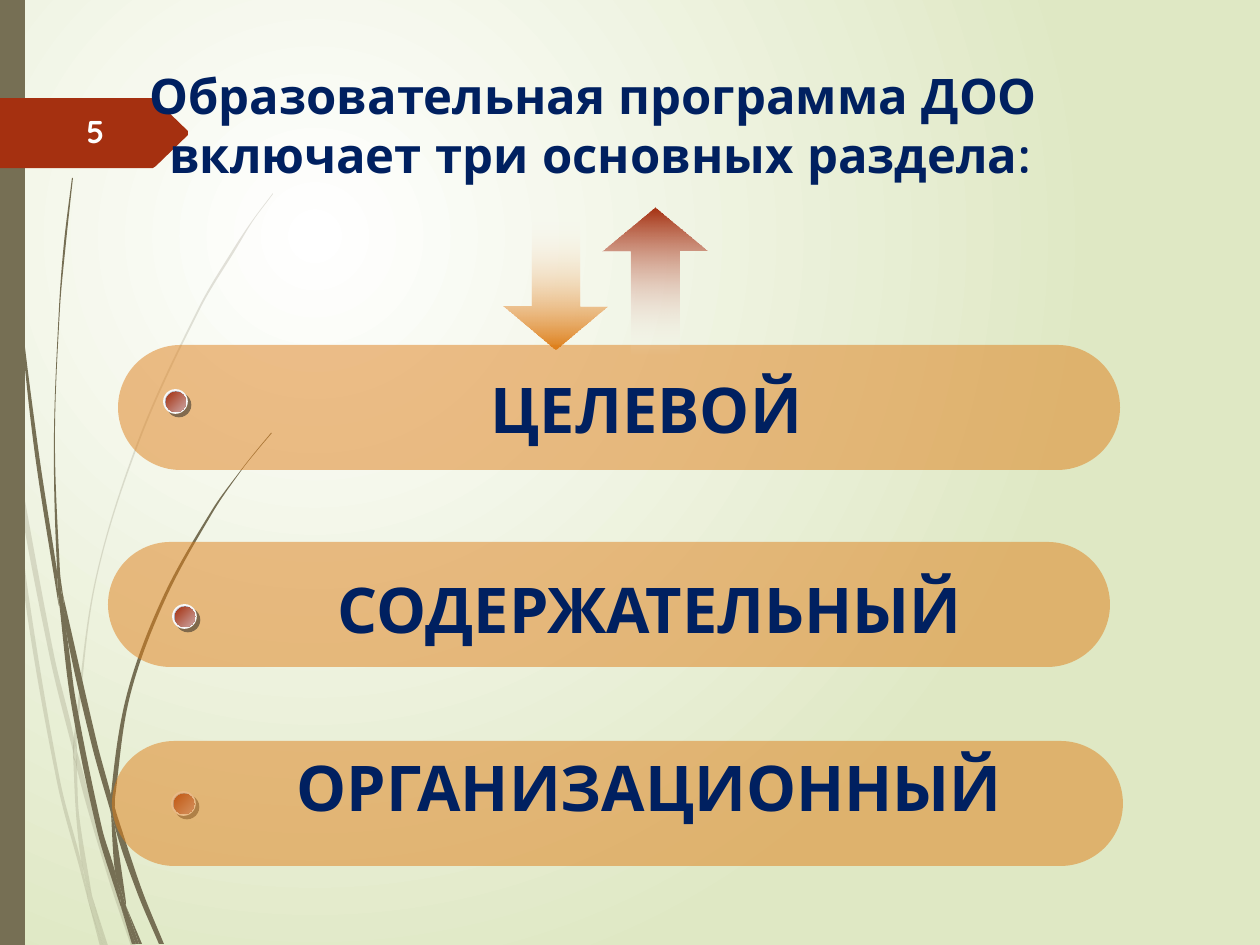
"""Build a slide that names the three sections of a preschool programme."""
from math import dist
from lxml.etree import SubElement as Sub
from pptx import Presentation
from pptx.dml.color import RGBColor as Rgb
from pptx.enum.shapes import MSO_SHAPE as Kind
from pptx.enum.text import MSO_ANCHOR as Anchor, PP_ALIGN as Align
from pptx.oxml.ns import qn
from pptx.util import Pt

UNIT = 914400 / 126
HUE = {
    "olive": "766F54", "rust": "A53010", "navy": "002060", "white": "FFFFFF",
    "amber": "DE7E18", "leaf": "DFE8C4", "rose": "CCA7A5", "mist": "DDDDE1",
    "ink": "223864", "rim": "F8F8F8", "shade": "1C1C1C",
}
PALE = [
    [(10, 441), (8, 406), (0, 355), (0, 377), (9, 433)],
    [(50, 658), (74, 755), (74, 738), (54, 655), (13, 435), (15, 474)],
    [(81, 765), (77, 751), (77, 769), (107, 874), (131, 946), (136, 946),
     (111, 872)],
    [(105, 946), (108, 946), (92, 896)],
    [(81, 861), (60, 780), (28, 591), (15, 474), (10, 441), (24, 592),
     (57, 782), (81, 873), (88, 900), (87, 891)],
    [(73, 755), (76, 814), (81, 861), (84, 872), (92, 896), (91, 890),
     (79, 814), (77, 769), (77, 766)],
    [(77, 736), (96, 582), (140, 440), (200, 309), (236, 249), (253, 221),
     (273, 194), (273, 193), (252, 221), (234, 248), (199, 307), (139, 438),
     (95, 581), (74, 736), (74, 738), (77, 751)],
    [(88, 900), (100, 946), (103, 946)],
    [(77, 766), (77, 769), (77, 751), (74, 738), (73, 755)],
    [(84, 872), (82, 861), (87, 891), (88, 900), (103, 946), (105, 946),
     (92, 896)],
]
DARK = [
    [(6, 139), (18, 294), (34, 447), (58, 601), (59, 606), (57, 576),
     (57, 571), (38, 447), (19, 292), (8, 137), (5, 60), (4, 0), (3, 0),
     (4, 60)],
    [(92, 746), (111, 813), (111, 798), (111, 795), (97, 743), (63, 595),
     (67, 636)],
    [(118, 818), (115, 808), (115, 827), (137, 892), (159, 944), (164, 944),
     (142, 890)],
    [(115, 871), (102, 828), (76, 701), (67, 636), (59, 601), (71, 702),
     (97, 830), (116, 892), (122, 910), (121, 903)],
    [(63, 595), (60, 571), (55, 440), (60, 309), (66, 243), (73, 178),
     (72, 178), (64, 243), (59, 309), (54, 440), (57, 566), (62, 595)],
    [(139, 944), (142, 944), (126, 906)],
    [(59, 601), (67, 636), (63, 595), (62, 595), (57, 566), (57, 571)],
    [(115, 798), (130, 696), (165, 600), (213, 512), (241, 471), (256, 452),
     (272, 433), (271, 433), (256, 451), (241, 470), (212, 510), (163, 597),
     (127, 694), (111, 795), (115, 808)],
    [(122, 910), (132, 944), (136, 944)],
    [(111, 813), (115, 871), (121, 890), (126, 906), (126, 902), (115, 827),
     (113, 820)],
    [(111, 813), (113, 820), (115, 827), (115, 808), (111, 795), (111, 798)],
    [(121, 890), (115, 871), (121, 903), (122, 910), (136, 944), (139, 944),
     (126, 906)],
]
TAG = [(0, 98), (153, 98), (156, 100), (188, 131), (188, 135), (156, 166),
       (153, 168), (0, 168)]


def px(num):
    return round(num * UNIT)


def rgb(name):
    return Rgb.from_string(HUE[name])


def fade(node, share):
    """Give a colour element an opacity in per cent."""
    Sub(node, qn("a:alpha"), val=str(share * 1000))


def paint(item, name, share=100):
    item.fill.solid()
    item.fill.fore_color.rgb = rgb(name)
    item.line.fill.background()
    item.shadow.inherit = False
    if share < 100:
        fade(item.fill._xPr.find(f".//{qn('a:srgbClr')}"), share)


def blend(fill, first, last, angle=0):
    """Fill with two colours and return the gradient element."""
    fill.gradient()
    fill.gradient_angle = angle
    for stop, name, spot in zip(fill.gradient_stops, (first, last), (0, 1)):
        stop.color.rgb = rgb(name)
        stop.position = spot
    return fill._xPr.find(qn("a:gradFill"))


def glow(slide):
    """Lay a round gradient on the background."""
    grad = blend(slide.background.fill, "white", "leaf")
    grad.remove(grad.find(qn("a:lin")))
    ring = Sub(grad, qn("a:path"), path="circle")
    Sub(ring, qn("a:fillToRect"), l="50000", t="50000", r="100000", b="100000")


def shape(slide, kind, x, y, w, h):
    item = slide.shapes.add_shape(kind, px(x), px(y), px(w), px(h))
    item.shadow.inherit = False
    item.line.fill.background()
    return item


def outline(slide, dots, name, share=100):
    dots = [(px(x), px(y)) for x, y in dots]
    pen = slide.shapes.build_freeform(*dots[0], scale=1.0)
    pen.add_line_segments(dots[1:], close=True)
    item = pen.convert_to_shape()
    paint(item, name, share)
    return item


def course(a, b):
    """Return the unit vector from a to b."""
    span = dist(a, b) or 1
    return (b[0] - a[0]) / span, (b[1] - a[1]) / span


def slope(a, b, c, side):
    """Return the tangent at b, or the direction of one side at a corner."""
    ways = course(a, b), course(b, c)
    flat = sum(m * n for m, n in zip(*ways)) > 0.8
    return course(a, c) if flat else ways[side]


def bend(dots):
    """Put two control points on each side of a closed outline."""
    out = [dots[0]]
    for i, b in enumerate(dots):
        a, c, d = dots[i - 1], *(dots[(i + k) % len(dots)] for k in (1, 2))
        third = dist(b, c) / 3
        (ux, uy), (vx, vy) = slope(a, b, c, 1), slope(b, c, d, 0)
        out += [(b[0] + ux * third, b[1] + uy * third),
                (c[0] - vx * third, c[1] - vy * third), c]
    return out


def blade(slide, dots, share):
    """Draw a curved piece of grass."""
    item = outline(slide, bend(dots), "olive", share)
    lines = list(item._element.iter(qn("a:lnTo")))
    for trio in zip(*[iter(lines)] * 3):
        curve = trio[0].getparent().makeelement(qn("a:cubicBezTo"))
        trio[0].addprevious(curve)
        for line in trio:
            curve.append(line[0])
            line.getparent().remove(line)


def bar(slide, x, y, w):
    item = shape(slide, Kind.ROUNDED_RECTANGLE, x, y, w, 125)
    item.adjustments[0] = 0.5
    paint(item, "amber", 50)


def arrow(slide, x, w, name, flips):
    """Draw an upright arrow that fades out at its tail."""
    item = shape(slide, Kind.RIGHT_ARROW, x, 230, w, 104)
    item.adjustments[0], item.adjustments[1] = 0.465, 0.421
    item.rotation = 270
    for flip in flips:
        item._element.spPr.xfrm.set(flip, "1")
    grad = blend(item.fill, "white", name)
    fade(grad.find(f".//{qn('a:srgbClr')}"), 0)


def bead(slide, x, y):
    """Draw a rimmed ball with a hard shadow."""
    rim = shape(slide, Kind.OVAL, x, y, 23, 23)
    blend(rim.fill, "mist", "ink", 315)
    rim.line.color.rgb = rgb("rim")
    rim.line.width = Pt(1)
    fx = rim._element.spPr.find(qn("a:effectLst"))
    cast = Sub(fx, qn("a:outerShdw"), dist=str(Pt(2.8)), dir="2700000",
               algn="ctr", rotWithShape="0")
    fade(Sub(cast, qn("a:srgbClr"), val=HUE["shade"]), 50)
    core = shape(slide, Kind.OVAL, x + 2, y + 2, 20, 20)
    blend(core.fill, "rust", "rose", 315)


def write(slide, text, x, y, w, h, size=36, hue="navy", align=Align.CENTER,
          lead=None):
    frame = slide.shapes.add_textbox(px(x), px(y), px(w), px(h)).text_frame
    frame.word_wrap = True
    frame.vertical_anchor = Anchor.TOP
    para = frame.paragraphs[0]
    para.text = text
    para.alignment = align
    para.line_spacing = lead
    for run in para.runs:
        font = run.font
        font.name, font.size, font.bold = "Quicksand", Pt(size), True
        font.color.rgb = rgb(hue)


def main():
    deck = Presentation()
    deck.slide_width, deck.slide_height = px(1260), px(945)
    slide = deck.slides.add_slide(deck.slide_layouts[6])
    glow(slide)
    for group, share in ((PALE, 20), (DARK, 100)):
        for dots in group:
            blade(slide, dots, share)
    paint(shape(slide, Kind.RECTANGLE, 0, 0, 25, 945), "olive")
    outline(slide, TAG, "rust")
    write(slide, "Образовательная программа ДОО \nвключает три основных раздела:",
          108, 59, 984, 158, size=28)
    arrow(slide, 488, 135, "amber", ("flipH", "flipV"))
    bead(slide, 172, 792)
    bar(slide, 118, 345, 1002)
    write(slide, "ЦЕЛЕВОЙ", 207, 373, 879, 82, lead=0.9)
    arrow(slide, 581, 148, "rust", ("flipV",))
    bar(slide, 108, 542, 1002)
    bar(slide, 112, 741, 1011)
    write(slide, "СОДЕРЖАТЕЛЬНЫЙ", 218, 573, 864, 82, lead=0.9)
    write(slide, "ОРГАНИЗАЦИОННЫЙ", 228, 751, 843, 82, lead=0.9)
    bead(slide, 173, 605)
    bead(slide, 164, 390)
    write(slide, "5", 74, 106, 69, 50, size=18, hue="white", align=Align.LEFT)
    deck.save("out.pptx")


if __name__ == "__main__":
    main()
